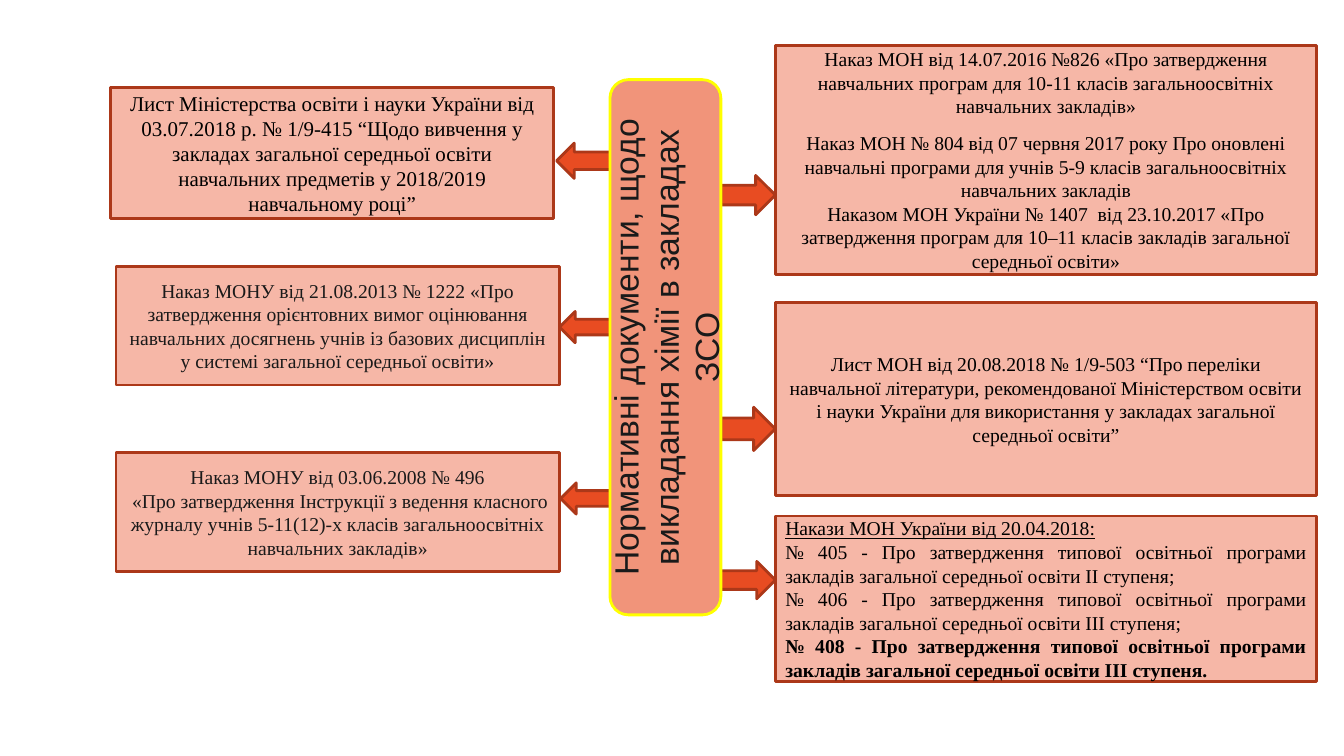
from pptx import Presentation
from pptx.dml.color import RGBColor
from pptx.enum.shapes import MSO_SHAPE as Preset
from pptx.enum.text import MSO_ANCHOR as Anchor, PP_ALIGN as Align
from pptx.util import Inches, Pt

BLACK = RGBColor(0x00, 0x00, 0x00)
CHARCOAL = RGBColor(0x1A, 0x1A, 0x1A)
ORANGE = RGBColor(0xE8, 0x4C, 0x22)
RUST = RGBColor(0xAC, 0x38, 0x19)
PINK = RGBColor(0xF6, 0xB7, 0xA7)
SALMON = RGBColor(0xF1, 0x94, 0x7A)
YELLOW = RGBColor(0xFF, 0xFF, 0x00)

LEFT_ARROWS = [
    (5.56, 4.79, 0.68, 0.31),
    (5.55, 3.09, 0.68, 0.31),
    (5.52, 1.42, 0.68, 0.35),
]
RIGHT_ARROWS = [
    (7, 5.57, 0.69, 0.37),
    (7.15, 4.04, 0.54, 0.43),
    (7.15, 1.74, 0.54, 0.39),
]

SPINE_BOX = (6.05, 0.79, 1.1, 5.31)
SPINE_TITLE = "Нормативні документи, щодо викладання хімії в закладах ЗСО"

# Box, font size, text colour, paragraphs
LEFT_DOCUMENTS = [
    ((1.1, 0.87, 4.39, 1.3), 15, BLACK, [
        "Лист Міністерства освіти і науки України від 03.07.2018 р. № 1/9-415 "
        "“Щодо вивчення у закладах загальної середньої освіти навчальних "
        "предметів у 2018/2019 навчальному році”"]),
    ((1.15, 2.64, 4.4, 1.18), 14, CHARCOAL, [
        "Наказ МОНУ від 21.08.2013 № 1222 «Про затвердження орієнтовних вимог "
        "оцінювання навчальних досягнень учнів із базових дисциплін у системі "
        "загальної середньої освіти»"]),
    ((1.15, 4.49, 4.4, 1.18), 14, CHARCOAL, [
        "Наказ МОНУ від 03.06.2008 № 496",
        " «Про затвердження Інструкції з ведення класного журналу учнів "
        "5-11(12)-х класів загальноосвітніх навчальних закладів»"]),
]

PROGRAMMES_BOX = (7.69, 0.45, 5.37, 2.27)
PROGRAMMES = [
    "Наказ МОН від 14.07.2016 №826 «Про затвердження навчальних програм для "
    "10-11 класів загальноосвітніх навчальних закладів»",
    "Наказ МОН № 804 від 07 червня 2017 року Про оновлені навчальні програми "
    "для учнів 5-9 класів загальноосвітніх навчальних закладів",
    "Наказом МОН України № 1407  від 23.10.2017 «Про затвердження програм для "
    "10–11 класів закладів загальної середньої освіти»",
]

LITERATURE_BOX = (7.69, 3, 5.37, 1.92)
LITERATURE = [
    "Лист МОН від 20.08.2018 № 1/9-503 “Про переліки навчальної літератури, "
    "рекомендованої Міністерством освіти і науки України для використання у "
    "закладах загальної середньої освіти”"]

ORDERS_BOX = (7.69, 5.12, 5.37, 1.64)
ORDERS = ["Накази МОН України від 20.04.2018:"] + [
    f"№ {number} - Про затвердження типової освітньої програми закладів "
    f"загальної середньої освіти {level} ступеня{end}"
    for number, level, end in
    [(405, "ІІ", ";"), (406, "III", ";"), (408, "III", ".")]]


def add_block(page, preset, box, fill, outline):
    block = page.shapes.add_shape(preset, *map(Inches, box))
    block.shadow.inherit = False
    block.fill.solid()
    block.fill.fore_color.rgb = fill
    block.line.color.rgb = outline
    block.line.width = Pt(2)
    return block


def write(block, texts, font_name, size, colour, align=Align.CENTER):
    """Fill a block with paragraphs and return them."""
    frame = block.text_frame
    frame.word_wrap = True
    frame.vertical_anchor = Anchor.MIDDLE
    for index, text in enumerate(texts):
        para = frame.add_paragraph() if index else frame.paragraphs[0]
        para.text = text
        para.alignment = align
        para.font.name = font_name
        para.font.size = Pt(size)
        para.font.color.rgb = colour
    return frame.paragraphs


def add_document(page, box, size, colour, texts, align=Align.CENTER):
    block = add_block(page, Preset.RECTANGLE, box, PINK, RUST)
    return write(block, texts, "Times New Roman", size, colour, align)


def add_arrows(page, preset, boxes):
    for box in boxes:
        add_block(page, preset, box, ORANGE, RUST)


def add_spine(page, box):
    """Place the central title, read from bottom to top."""
    spine = add_block(page, Preset.ROUNDED_RECTANGLE, box, SALMON, YELLOW)
    write(spine, [SPINE_TITLE], "Arial", 24, CHARCOAL)
    spine.element.txBody.bodyPr.set("vert", "vert270")


def add_right_documents(page):
    programmes = add_document(page, PROGRAMMES_BOX, 14, BLACK, PROGRAMMES)
    programmes[1].space_before = Pt(9.5)
    add_document(page, LITERATURE_BOX, 14, BLACK, LITERATURE)
    orders = add_document(page, ORDERS_BOX, 14, BLACK, ORDERS, Align.JUSTIFY)
    orders[0].font.underline = True
    orders[-1].font.bold = True


def main():
    deck = Presentation()
    deck.slide_width, deck.slide_height = Inches(13.33), Inches(7.5)
    page = deck.slides.add_slide(deck.slide_layouts[6])
    add_arrows(page, Preset.LEFT_ARROW, LEFT_ARROWS)
    add_arrows(page, Preset.RIGHT_ARROW, RIGHT_ARROWS)
    for document in LEFT_DOCUMENTS:
        add_document(page, *document)
    add_right_documents(page)
    add_spine(page, SPINE_BOX)
    deck.save("out.pptx")


if __name__ == "__main__":
    main()
